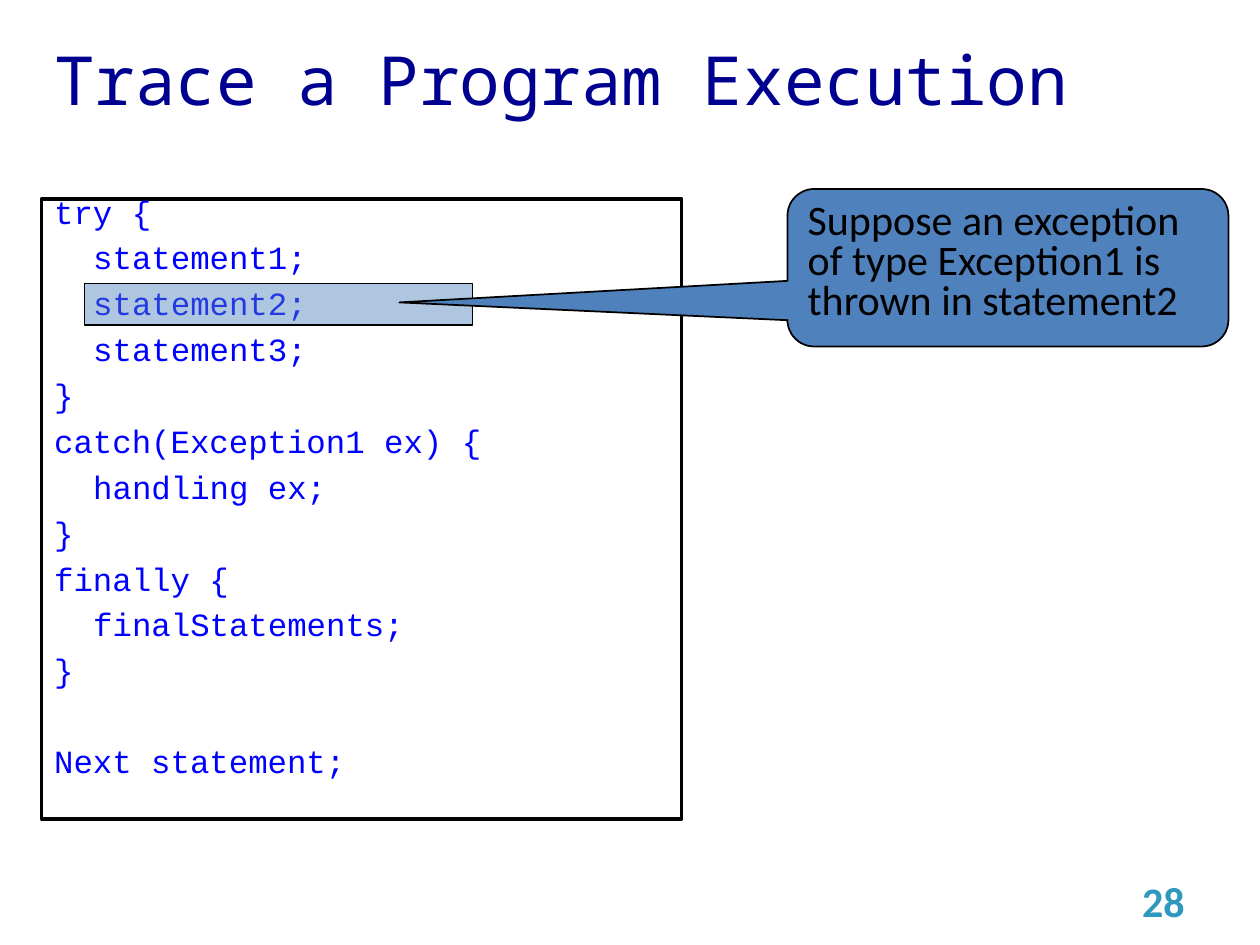
"""Build the slide that traces a try, catch and finally block."""
import lxml.etree
import pptx
import pptx.util
import pptx.dml.color
import pptx.enum.shapes
import pptx.enum.text
import pptx.oxml.ns

Inches, Pt = pptx.util.Inches, pptx.util.Pt
Color = pptx.dml.color.RGBColor.from_string
Kind = pptx.enum.shapes.MSO_SHAPE
Align = pptx.enum.text.PP_ALIGN
Anchor = pptx.enum.text.MSO_ANCHOR
qn = pptx.oxml.ns.qn

theme = {
    "title": ("Noto Sans Mono", 38.7, "000090"),
    "code": ("Courier New", 18.5, "0000FF"),
    "note": ("Calibri", 24, "000000"),
    "page": ("Calibri", 24, "2E98BD"),
    "paper": "FFFFFF",
    "accent": "4F81BD",
    "line": "000000",
}


def style(para, role, align=Align.LEFT):
    face, size, color = theme[role]
    para.font.name = face
    para.font.size = Pt(size)
    para.font.color.rgb = Color(color)
    para.alignment = align


def paint(shape, fill, width):
    shape.shadow.inherit = False
    shape.fill.solid()
    shape.fill.fore_color.rgb = Color(theme[fill])
    shape.line.color.rgb = Color(theme["line"])
    shape.line.width = Pt(width)


deck = pptx.Presentation()
deck.slide_width, deck.slide_height = Inches(10), Inches(7.5)
slide = deck.slides.add_slide(deck.slide_layouts[1])
shapes = slide.shapes

title = shapes.title
title.left, title.top = Inches(0.33), Inches(0.33)
title.width, title.height = Inches(8.92), Inches(0.58)
title.text_frame.text = "Trace a Program Execution"
title.text_frame.auto_size = pptx.enum.text.MSO_AUTO_SIZE.NONE
title.text_frame.vertical_anchor = Anchor.MIDDLE
style(title.text_frame.paragraphs[0], "title")

code = [
    (0, "try {"),
    (1, "statement1;"),
    (1, "statement2;"),
    (1, "statement3;"),
    (0, "}"),
    (0, "catch(Exception1 ex) {"),
    (1, "handling ex;"),
    (0, "}"),
    (0, "finally {"),
    (1, "finalStatements;"),
    (0, "}"),
    (0, "Next statement;"),
]
body = slide.placeholders[1]
body.left, body.top = Inches(0.33), Inches(1.58)
body.width, body.height = Inches(5.08), Inches(4.92)
paint(body, "paper", 2)
frame = body.text_frame
frame.auto_size = pptx.enum.text.MSO_AUTO_SIZE.NONE
frame.text = "\n".join(text for depth, text in code)
for para, (depth, text) in zip(frame.paragraphs, code):
    style(para, "code")
    para.line_spacing = 0.6
    para.space_before = Pt(12.9)
    props = para._p.get_or_add_pPr()
    props.set("marL", str(depth * Inches(0.31)))
    props.set("indent", "0")
    props.insert_element_before(
        props.makeelement(qn("a:buNone")), "a:tabLst", "a:defRPr", "a:extLst"
    )
frame.paragraphs[-1].space_before = Pt(38.4)

mark = shapes.add_shape(
    Kind.RECTANGLE, Inches(0.67), Inches(2.25), Inches(3.08), Inches(0.33)
)
paint(mark, "accent", 1)
tint = mark._element.spPr.find(qn("a:solidFill"))[0]
lxml.etree.SubElement(tint, qn("a:alpha")).set("val", "45000")

note = shapes.add_shape(
    Kind.ROUNDED_RECTANGULAR_CALLOUT,
    Inches(6.25), Inches(1.5), Inches(3.5), Inches(1.25),
)
paint(note, "accent", 1)
for spot, value in enumerate((-1.38, 0.22, 0.17)):
    note.adjustments[spot] = value
note.text_frame.text = "Suppose an exception of type Exception1 is thrown in statement2"
note.text_frame.vertical_anchor = Anchor.TOP
para = note.text_frame.paragraphs[0]
style(para, "note")
para.line_spacing = 0.8
para.space_before = Pt(4.8)

page = shapes.add_textbox(Inches(7.17), Inches(6.95), Inches(2.33), Inches(0.4))
page.text_frame.word_wrap = True
page.text_frame.vertical_anchor = Anchor.MIDDLE
page.text_frame.text = "28"
para = page.text_frame.paragraphs[0]
style(para, "page", Align.RIGHT)
para.font.bold = True

deck.save("out.pptx")
